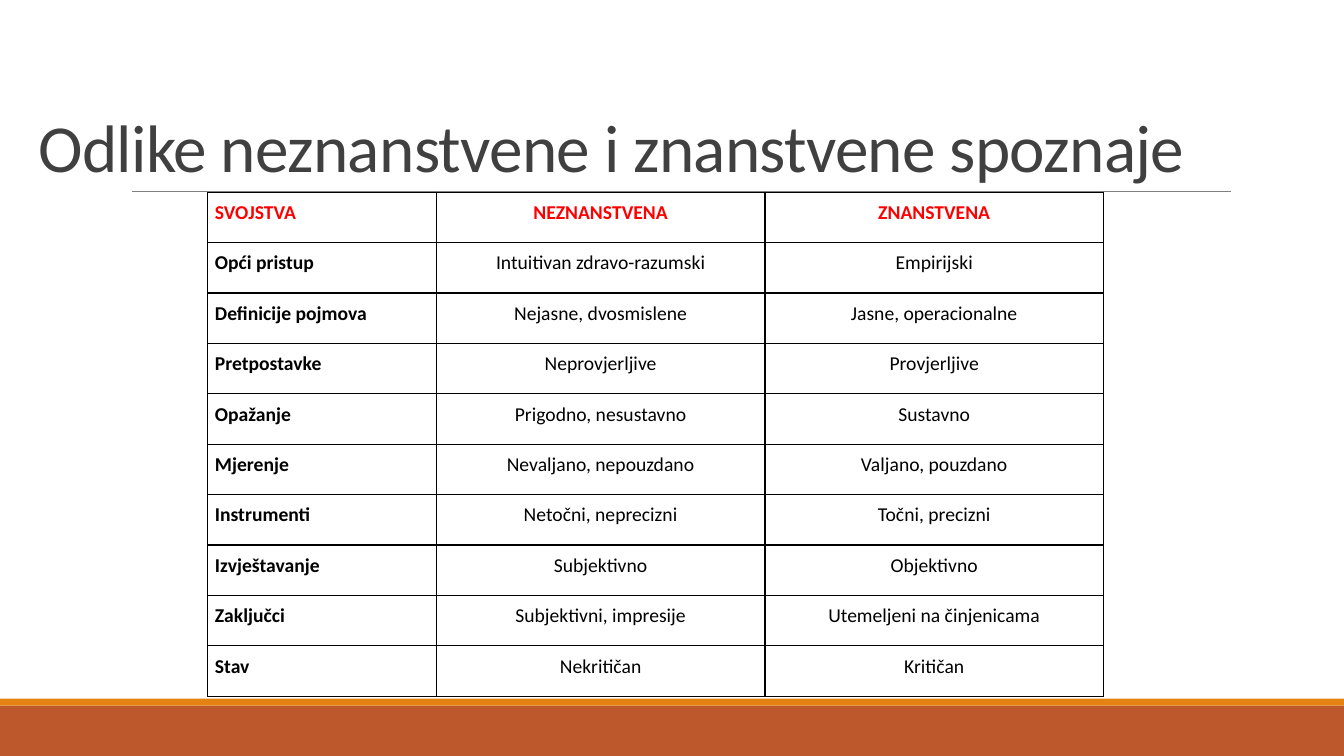
from lxml.etree import SubElement
from pptx import Presentation
from pptx.dml.color import RGBColor
from pptx.enum.shapes import MSO_CONNECTOR as Link, MSO_SHAPE as Kind
from pptx.enum.text import MSO_ANCHOR as Anchor, MSO_AUTO_SIZE as Auto, PP_ALIGN as Align
from pptx.oxml.ns import qn
from pptx.util import Pt

TITLE = "Odlike neznanstvene i znanstvene spoznaje"
ROWS = [
    ("SVOJSTVA", "NEZNANSTVENA", "ZNANSTVENA"),
    ("Opći pristup", "Intuitivan zdravo-razumski", "Empirijski"),
    ("Definicije pojmova", "Nejasne, dvosmislene", "Jasne, operacionalne"),
    ("Pretpostavke", "Neprovjerljive", "Provjerljive"),
    ("Opažanje", "Prigodno, nesustavno", "Sustavno"),
    ("Mjerenje", "Nevaljano, nepouzdano", "Valjano, pouzdano"),
    ("Instrumenti", "Netočni, neprecizni", "Točni, precizni"),
    ("Izvještavanje", "Subjektivno", "Objektivno"),
    ("Zaključci", "Subjektivni, impresije", "Utemeljeni na činjenicama"),
    ("Stav", "Nekritičan", "Kritičan"),
]
COLS = (163.4, 234.7, 241.9)
HIGH = 36
BANDS = [(504, 36, "BD582C"), (499, 5, "E48312")]


def tint(code):
    return RGBColor.from_string(code)


def write(para, text, size, color, bold=False):
    run = para.add_run()
    run.text = text
    font = run.font
    font.name, font.size, font.bold = "Calibri", Pt(size), bold
    font.color.rgb = tint(color)
    return run


def inset(part, side, top):
    part.margin_left = part.margin_right = Pt(side)
    part.margin_top = part.margin_bottom = Pt(top)


def frame(cell):
    props = cell._tc.get_or_add_tcPr()
    for side in ("lnL", "lnR", "lnT", "lnB"):
        edge = SubElement(props, qn("a:" + side), w=str(Pt(0.96)))
        fill = SubElement(edge, qn("a:solidFill"))
        SubElement(fill, qn("a:srgbClr"), val="000000")
    cell.fill.background()


deck = Presentation()
deck.slide_width, deck.slide_height = Pt(960), Pt(540)
slide = deck.slides.add_slide(deck.slide_layouts[5])
shapes = slide.shapes

for top, high, color in BANDS:
    band = shapes.add_shape(Kind.RECTANGLE, 0, Pt(top), Pt(960), Pt(high))
    band.shadow.inherit = False
    band.fill.solid()
    band.fill.fore_color.rgb = tint(color)
    band.line.fill.background()

rule = shapes.add_connector(Link.STRAIGHT, Pt(94.2), Pt(136.8), Pt(879), Pt(136.8))
rule.line.color.rgb = tint("808080")
rule.line.width = Pt(0.5)
SubElement(rule._element.spPr, qn("a:effectLst"))

title = shapes.title
title.left, title.top = Pt(20.2), Pt(22.3)
title.width, title.height = Pt(858.2), Pt(114.5)
body = title.text_frame
body.word_wrap, body.auto_size = True, Auto.NONE
body.vertical_anchor = Anchor.BOTTOM
inset(body, 7.2, 3.6)
para = body.paragraphs[0]
para.alignment, para.line_spacing = Align.LEFT, 0.85
run = write(para, TITLE, 48, "404040")
run.font._element.set("spc", "-50")

grid = shapes.add_table(len(ROWS), len(COLS), Pt(148.3), Pt(137.3),
                        Pt(sum(COLS)), Pt(HIGH * len(ROWS))).table
for col, wide in zip(grid.columns, COLS):
    col.width = Pt(wide)
for r, row in enumerate(ROWS):
    grid.rows[r].height = Pt(HIGH)
    for c, text in enumerate(row):
        cell = grid.cell(r, c)
        inset(cell, 5.2, 3.6)
        frame(cell)
        para = cell.text_frame.paragraphs[0]
        para.alignment = Align.CENTER if c else Align.LEFT
        para.line_spacing, para.space_after = 1.15, Pt(10)
        write(para, text, 14, "000000" if r else "FF0000", r == 0 or c == 0)

deck.save("out.pptx")
